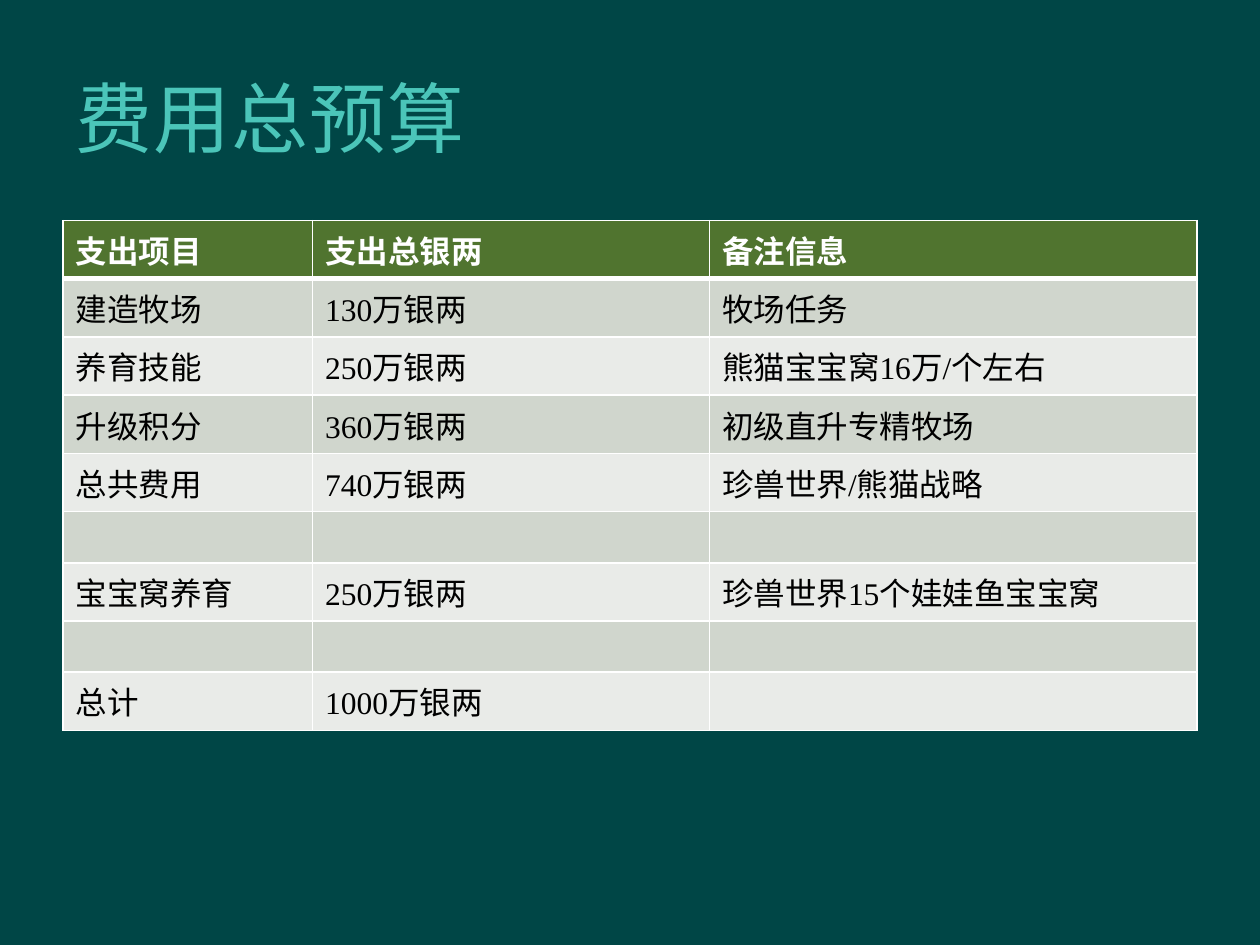
from dataclasses import dataclass

import pptx
import pptx.dml.color
import pptx.enum.text
import pptx.oxml
import pptx.oxml.ns
import pptx.util
from pptx.table import _Cell
from pptx.text.text import _Paragraph, _Run

Pt = pptx.util.Pt

COLORS = {
    "background": "004646",
    "title": "4BC5B9",
    "header": "50742F",
    "odd_row": "D0D6CD",
    "even_row": "E9EBE8",
    "white": "FFFFFF",
    "black": "000000",
}


@dataclass
class CellStyle:
    fill: str
    text: str
    bold: bool = False
    bottom_border: float = 1
    top_border: float = 1


@dataclass
class BudgetRow:
    item: str = ""
    amount: str = ""
    note: str = ""


COLUMN_WIDTHS = (142.6, 226.8, 278.6)
ROW_HEIGHT = 29.2
BUDGET = [
    BudgetRow("支出项目", "支出总银两", "备注信息"),
    BudgetRow("建造牧场", "130万银两", "牧场任务"),
    BudgetRow("养育技能", "250万银两", "熊猫宝宝窝16万/个左右"),
    BudgetRow("升级积分", "360万银两", "初级直升专精牧场"),
    BudgetRow("总共费用", "740万银两", "珍兽世界/熊猫战略"),
    BudgetRow(),
    BudgetRow("宝宝窝养育", "250万银两", "珍兽世界15个娃娃鱼宝宝窝"),
    BudgetRow(),
    BudgetRow("总计", "1000万银两"),
]


def rgb(name: str) -> pptx.dml.color.RGBColor:
    return pptx.dml.color.RGBColor.from_string(COLORS[name])


def add_run(paragraph: _Paragraph, text: str, font: str, size: float,
            color: str, bold: bool = False) -> _Run:
    run = paragraph.add_run()
    run.text = text
    run.font.name = font
    run.font.size = Pt(size)
    run.font.bold = bold
    run.font.color.rgb = rgb(color)
    return run


def set_borders(cell: _Cell, style: CellStyle) -> None:
    properties = cell._tc.get_or_add_tcPr()
    widths = {"lnL": 1, "lnR": 1, "lnT": style.top_border, "lnB": style.bottom_border}
    for tag, width in widths.items():
        properties.append(pptx.oxml.parse_xml(
            f'<a:{tag} {pptx.oxml.ns.nsdecls("a")} w="{Pt(width)}">'
            f'<a:solidFill><a:srgbClr val="{COLORS["white"]}"/></a:solidFill>'
            f'</a:{tag}>'))


def fill_cell(cell: _Cell, text: str, style: CellStyle) -> None:
    set_borders(cell, style)
    cell.fill.solid()
    cell.fill.fore_color.rgb = rgb(style.fill)
    if text:
        add_run(cell.text_frame.paragraphs[0], text, "Times New Roman", 18,
                style.text, style.bold)


def row_style(index: int) -> CellStyle:
    if index == 0:
        return CellStyle("header", "white", bold=True, bottom_border=3)
    fill = "odd_row" if index % 2 else "even_row"
    return CellStyle(fill, "black", top_border=3 if index == 1 else 1)


def main() -> None:
    presentation = pptx.Presentation()
    presentation.slide_width, presentation.slide_height = Pt(720), Pt(540)

    # Slide and background
    slide = presentation.slides.add_slide(presentation.slide_layouts[5])
    slide.background.fill.solid()
    slide.background.fill.fore_color.rgb = rgb("background")

    # Title
    title = slide.shapes.title
    title.left, title.top, title.width, title.height = Pt(36), Pt(21.6), Pt(612), Pt(90)
    title.text_frame.vertical_anchor = pptx.enum.text.MSO_ANCHOR.MIDDLE
    paragraph = title.text_frame.paragraphs[0]
    paragraph.alignment = pptx.enum.text.PP_ALIGN.LEFT
    run = add_run(paragraph, "费用总预算", "Arial", 44, "title")
    run._r.get_or_add_rPr().set("spc", "50")

    # Budget table
    table = slide.shapes.add_table(
        len(BUDGET), len(COLUMN_WIDTHS), Pt(36), Pt(126),
        Pt(sum(COLUMN_WIDTHS)), Pt(ROW_HEIGHT * len(BUDGET))).table
    for column, width in zip(table.columns, COLUMN_WIDTHS):
        column.width = Pt(width)
    for index, (row, budget) in enumerate(zip(table.rows, BUDGET)):
        row.height = Pt(ROW_HEIGHT)
        for cell, text in zip(row.cells, (budget.item, budget.amount, budget.note)):
            fill_cell(cell, text, row_style(index))

    presentation.save("out.pptx")


if __name__ == "__main__":
    main()
